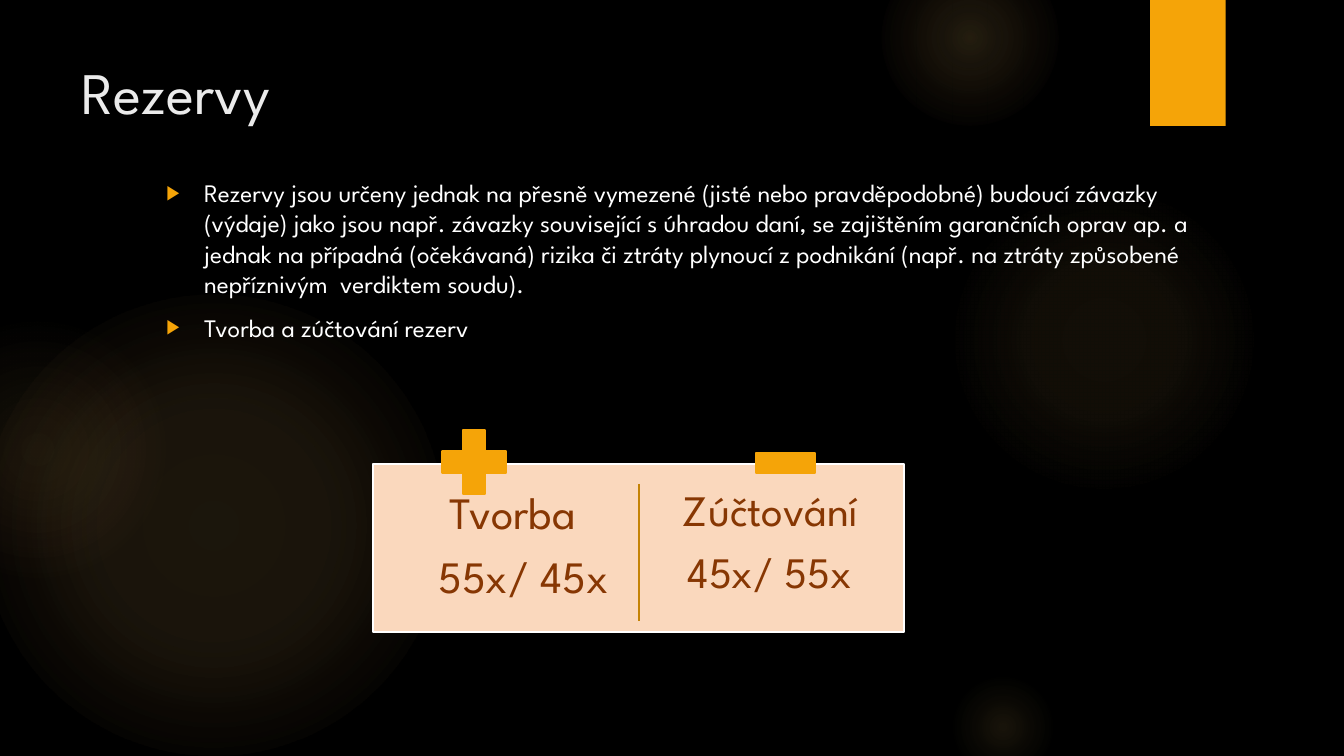
import pptx
import pptx.util
import pptx.dml.color
import pptx.enum.shapes
import pptx.enum.text
import pptx.oxml
import pptx.oxml.ns
from dataclasses import dataclass

Pt = pptx.util.Pt
SHAPE = pptx.enum.shapes.MSO_SHAPE
ALIGN = pptx.enum.text.PP_ALIGN
ANCHOR = pptx.enum.text.MSO_ANCHOR
NAMESPACE = pptx.oxml.ns.nsdecls("a")


@dataclass(frozen=True)
class Theme:
    font: str = "League Spartan"
    background: str = "000000"
    accent: str = "F5A408"
    glow: str = "FAC96A"
    warm_glow: str = "F59B74"
    title: str = "EBEBEB"
    white: str = "FFFFFF"
    panel: str = "FAD8BD"
    label: str = "873703"
    divider: str = "C48306"
    title_size: float = 42
    body_size: float = 18
    creation_size: float = 32
    settlement_size: float = 31
    line_width: float = 1.5


THEME = Theme()

BODY_TEXT = [
    "Rezervy jsou určeny jednak na přesně vymezené (jisté nebo pravděpodobné) budoucí závazky "
    "(výdaje) jako jsou např. závazky související s úhradou daní, se zajištěním garančních oprav "
    "ap. a jednak na případná (očekávaná) rizika či ztráty plynoucí z podnikání (např. na ztráty "
    "způsobené nepříznivým  verdiktem soudu).",
    "Tvorba a zúčtování rezerv",
]

# left, top, diameter, (position %, opacity %) stops, outer colour
GLOWS = [
    (-12.24, 210.24, 329.76, [(0, 11), (36, 10), (75, 0)], THEME.glow),
    (-66.24, 228.24, 185.76, [(0, 8), (36, 5), (71, 0)], THEME.warm_glow),
    (677.52, 131.76, 221.76, [(0, 7), (36, 6), (69, 0)], THEME.glow),
    (630, -36, 126, [(0, 14), (36, 7), (73, 0)], THEME.glow),
    (677.52, 480.24, 77.76, [(0, 10), (31, 5), (66, 0)], THEME.glow),
]


def rgb(colour):
    return pptx.dml.color.RGBColor.from_string(colour)


def append_xml(parent, *fragments):
    for fragment in fragments:
        head, separator, tail = fragment.partition(">")
        slash = "/" if head.endswith("/") else ""
        head = head.rstrip("/")
        parent.append(pptx.oxml.parse_xml(f"{head} {NAMESPACE}{slash}{separator}{tail}"))


def add_box(shapes, kind, left, top, width, height, fill=None, line=None):
    box = shapes.add_shape(kind, Pt(left), Pt(top), Pt(width), Pt(height))
    box.shadow.inherit = False
    if fill:
        box.fill.solid()
        box.fill.fore_color.rgb = rgb(fill)
    if line:
        box.line.color.rgb = rgb(line)
        box.line.width = Pt(THEME.line_width)
    else:
        box.line.fill.background()
    return box


def add_glow(shapes, left, top, diameter, stops, outer):
    """Soft circle that fades from its centre."""
    glow = add_box(shapes, SHAPE.OVAL, left, top, diameter, diameter, THEME.glow)
    colours = [THEME.glow, THEME.glow, outer]
    stop_xml = "".join(
        f'<a:gs pos="{position * 1000}"><a:srgbClr val="{colour}">'
        f'<a:alpha val="{opacity * 1000}"/></a:srgbClr></a:gs>'
        for (position, opacity), colour in zip(stops, colours))
    properties = glow._element.spPr
    solid = properties.find(pptx.oxml.ns.qn("a:solidFill"))
    gradient = pptx.oxml.parse_xml(
        f'<a:gradFill {NAMESPACE} rotWithShape="1"><a:gsLst>{stop_xml}</a:gsLst>'
        '<a:path path="circle"><a:fillToRect l="50000" t="50000" r="50000" b="50000"/>'
        "</a:path></a:gradFill>")
    properties.replace(solid, gradient)


def add_tab(shapes):
    """Accent tab at the top edge, with a small drop shadow."""
    tab = add_box(shapes, SHAPE.RECTANGLE, 821.52, 0, 54, 90, THEME.accent)
    effects = tab._element.spPr.find(pptx.oxml.ns.qn("a:effectLst"))
    append_xml(
        effects,
        f'<a:outerShdw blurRad="{Pt(3)}" dist="{Pt(2)}" dir="5400000" rotWithShape="0">'
        '<a:srgbClr val="000000"><a:alpha val="45000"/></a:srgbClr></a:outerShdw>')


def write_text(frame, lines, *, size, colour, align=ALIGN.LEFT, anchor=ANCHOR.TOP,
               spacing=1.0, before=0, after=0, inset=None):
    frame.word_wrap = True
    frame.auto_size = pptx.enum.text.MSO_AUTO_SIZE.NONE
    frame.vertical_anchor = anchor
    if inset is not None:
        frame.margin_left = frame.margin_right = Pt(inset)
        frame.margin_top = frame.margin_bottom = Pt(inset)
    for index, line in enumerate(lines):
        para = frame.paragraphs[0] if index == 0 else frame.add_paragraph()
        para.alignment = align
        para.line_spacing = spacing
        para.space_before = Pt(before)
        para.space_after = Pt(after)
        span = para.add_run()
        span.text = line
        span.font.name = THEME.font
        span.font.size = Pt(size)
        span.font.color.rgb = rgb(colour)
    return frame.paragraphs


def indent(para, left, first=0):
    properties = para._p.get_or_add_pPr()
    properties.set("marL", str(Pt(left)))
    properties.set("indent", str(Pt(first)))
    return properties


def add_bullet(para):
    append_xml(
        indent(para, 27, -27),
        f'<a:buClr><a:srgbClr val="{THEME.accent}"/></a:buClr>',
        '<a:buSzPct val="80000"/>',
        '<a:buChar char="▶"/>')


def place(page, box, left, top, width, height):
    """Position a placeholder and bring it in front of the backdrop."""
    box.left, box.top, box.width, box.height = map(Pt, (left, top, width, height))
    page.shapes._spTree.append(box._element)


def add_label(shapes, lines, left, top, width, height, size, inset):
    box = shapes.add_textbox(Pt(left), Pt(top), Pt(width), Pt(height))
    return write_text(box.text_frame, lines, size=size, colour=THEME.label,
                      align=ALIGN.CENTER, spacing=0.9, after=0.35 * size, inset=inset)


def add_divider(shapes, x, top, bottom):
    divider = shapes.add_connector(
        pptx.enum.shapes.MSO_CONNECTOR.STRAIGHT, Pt(x), Pt(top), Pt(x), Pt(bottom))
    divider.line.color.rgb = rgb(THEME.divider)
    divider.line.width = Pt(THEME.line_width)
    append_xml(divider._element.spPr, "<a:effectLst/>")


def add_comparison(page):
    """Panel that sets creation against settlement."""
    shapes = page.shapes.add_group_shape().shapes
    add_box(shapes, SHAPE.RECTANGLE, 266.4, 331.2, 379.44, 120.24, THEME.panel, THEME.white)
    creation = add_label(shapes, ["Tvorba", "55x/ 45x"], 270, 345.6, 192.24, 102.24,
                         THEME.creation_size, 5)
    indent(creation[1], 16)
    add_label(shapes, ["Zúčtování", "45x/ 55x"], 452.88, 344.88, 194.4, 102.24,
              THEME.settlement_size, 4.3)
    plus = add_box(shapes, SHAPE.CROSS, 316.08, 307.44, 45.36, 45.36, THEME.accent, THEME.accent)
    plus.adjustments[0] = 0.328
    add_box(shapes, SHAPE.RECTANGLE, 540, 323.28, 42.48, 14.4, THEME.accent, THEME.accent)
    add_divider(page.shapes, 456.48, 345.6, 443.52)


def main():
    deck = pptx.Presentation()
    deck.slide_width, deck.slide_height = Pt(960), Pt(540)
    page = deck.slides.add_slide(deck.slide_layouts[1])
    title, body = page.placeholders

    # Backdrop
    page.background.fill.solid()
    page.background.fill.fore_color.rgb = rgb(THEME.background)
    for glow in GLOWS:
        add_glow(page.shapes, *glow)
    add_tab(page.shapes)

    # Title and list
    place(page, title, 51.12, 36, 740.88, 57.6)
    write_text(title.text_frame, ["Rezervy"], size=THEME.title_size, colour=THEME.title,
               anchor=ANCHOR.MIDDLE)
    place(page, body, 111.6, 123.12, 756.72, 368.64)
    for para in write_text(body.text_frame, BODY_TEXT, size=THEME.body_size,
                           colour=THEME.white, before=0.2 * THEME.body_size, after=6):
        add_bullet(para)

    # Diagram
    add_comparison(page)
    deck.save("out.pptx")


if __name__ == "__main__":
    main()
